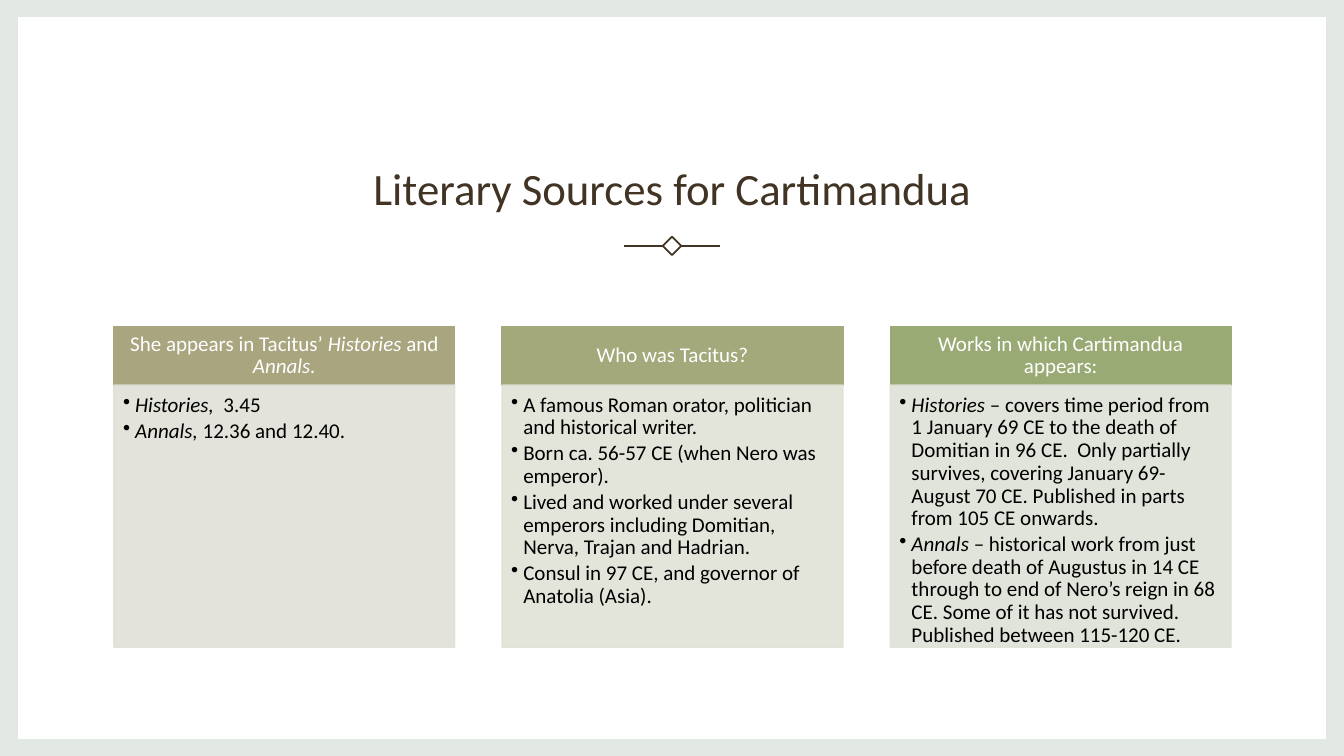
from dataclasses import dataclass

from lxml import etree
from pptx import Presentation, util as u
from pptx.dml.color import RGBColor
from pptx.enum import shapes, text
from pptx.oxml import ns

TITLE = "Literary Sources for Cartimandua"
COLUMNS = [
    {
        "heading": [("She appears in Tacitus’ ", False), ("Histories", True),
                    (" and ", False), ("Annals.", True)],
        "points": [
            [("Histories, ", True), (" 3.45", False)],
            [("Annals, ", True), ("12.36 and 12.40.", False)],
        ],
    },
    {
        "heading": [("Who was Tacitus?", False)],
        "points": [
            [("A famous Roman orator, politician and historical writer.", False)],
            [("Born ca. 56-57 CE (when Nero was emperor).", False)],
            [("Lived and worked under several emperors including Domitian, "
              "Nerva, Trajan and Hadrian.", False)],
            [("Consul in 97 CE, and governor of Anatolia (Asia).", False)],
        ],
    },
    {
        "heading": [("Works in which Cartimandua appears:", False)],
        "points": [
            [("Histories", True),
             (" – covers time period from 1 January 69 CE to the death of Domitian "
              "in 96 CE.  Only partially survives, covering January 69-August 70 CE. "
              "Published in parts from 105 CE onwards.", False)],
            [("Annals", True),
             (" – historical work from just before death of Augustus in 14 CE "
              "through to end of Nero’s reign in 68 CE. Some of it has not survived. "
              "Published between 115-120 CE.", False)],
        ],
    },
]


@dataclass(frozen=True)
class Theme:
    font: str = "Calibri"
    title_size: int = 32
    text_size: int = 15
    ink: str = "413424"
    body_ink: str = "000000"
    paper: str = "FFFFFF"
    border: str = "E2E8E3"
    headings: tuple = ("A8A57F", "A3A97A", "99AA74")
    bodies: tuple = ("E1E1D8", "E0E2D7", "DEE2D6")
    body_opacity: int = 90


THEME = Theme()
WIDTH, HEIGHT = 13.33, 7.5
BORDER_X, BORDER_Y = 0.18, 0.17
MARGIN = 1.13
CONTENT_WIDTH = WIDTH - 2 * MARGIN + 0.01
COLUMN_WIDTH = 3.38
COLUMN_STEP = (CONTENT_WIDTH - COLUMN_WIDTH) / (len(COLUMNS) - 1)
HEADING_TOP, HEADING_HEIGHT, BODY_HEIGHT = 3.24, 0.58, 2.6
ORNAMENT_Y, DIAMOND_SIDE = 2.44, 0.13
RULE_INNER, RULE_OUTER = 0.09, 0.475
INDENT = 0.12


def inches(*lengths):
    return [u.Inches(length) for length in lengths]


def colour(code):
    return RGBColor.from_string(code)


def add_box(parent, place, fill=None, line=None, line_width=1):
    box = parent.add_shape(shapes.MSO_SHAPE.RECTANGLE, *inches(*place))
    box.shadow.inherit = False
    for paint, code in ((box.fill, fill), (box.line.fill, line)):
        if code:
            paint.solid()
            paint.fore_color.rgb = colour(code)
        else:
            paint.background()
    if line:
        box.line.width = u.Pt(line_width)
    return box


def make_translucent(box):
    for tint in box.element.spPr.iter(ns.qn("a:srgbClr")):
        etree.SubElement(tint, ns.qn("a:alpha"), val=str(THEME.body_opacity * 1000))


def set_frame(frame, anchor, insets):
    frame.word_wrap = True
    frame.auto_size = text.MSO_AUTO_SIZE.NONE
    frame.vertical_anchor = anchor
    (frame.margin_left, frame.margin_top,
     frame.margin_right, frame.margin_bottom) = inches(*insets)


def write(paragraph, runs, size, ink, align, spacing, after=0):
    paragraph.alignment = align
    paragraph.line_spacing = spacing
    paragraph.space_before = u.Pt(0)
    paragraph.space_after = u.Pt(after)
    for words, italic in runs:
        run = paragraph.add_run()
        run.text = words
        run.font.name = THEME.font
        run.font.size = u.Pt(size)
        run.font.italic = italic
        run.font.color.rgb = colour(ink)


def add_bullet(paragraph):
    properties = paragraph._p.get_or_add_pPr()
    properties.set("marL", str(u.Inches(INDENT)))
    properties.set("indent", str(-u.Inches(INDENT)))
    etree.SubElement(properties, ns.qn("a:buChar"), char="•")


def add_title(slide):
    title = slide.shapes.title
    title.left, title.top, title.width, title.height = inches(
        MARGIN, 1.05, CONTENT_WIDTH, 1.13)
    set_frame(title.text_frame, text.MSO_ANCHOR.BOTTOM, (0.1, 0.05, 0.1, 0.05))
    write(title.text_frame.paragraphs[0], [(TITLE, False)], THEME.title_size,
          THEME.ink, text.PP_ALIGN.CENTER, 1.1)
    slide.shapes.element.append(title.element)


def add_ornament(slide):
    ornament = slide.shapes.add_group_shape().shapes
    centre, half = WIDTH / 2, DIAMOND_SIDE / 2
    diamond = add_box(ornament, (centre - half, ORNAMENT_Y - half,
                                 DIAMOND_SIDE, DIAMOND_SIDE),
                      line=THEME.ink, line_width=1.25)
    diamond.rotation = 45
    for side in (1, -1):
        rule = ornament.add_connector(
            shapes.MSO_CONNECTOR.STRAIGHT,
            *inches(centre + side * RULE_INNER, ORNAMENT_Y,
                    centre + side * RULE_OUTER, ORNAMENT_Y))
        rule.line.color.rgb = colour(THEME.ink)
        rule.line.width = u.Pt(1.25)
        etree.SubElement(rule.element.spPr, ns.qn("a:effectLst"))


def add_columns(slide):
    group = slide.shapes.add_group_shape().shapes
    for index, column in enumerate(COLUMNS):
        left = MARGIN + index * COLUMN_STEP
        tint = THEME.headings[index]
        heading = add_box(group, (left, HEADING_TOP, COLUMN_WIDTH, HEADING_HEIGHT),
                          tint, tint)
        set_frame(heading.text_frame, text.MSO_ANCHOR.MIDDLE, (0.12, 0.07, 0.12, 0.07))
        write(heading.text_frame.paragraphs[0], column["heading"], THEME.text_size,
              THEME.paper, text.PP_ALIGN.CENTER, 0.9)

        tint = THEME.bodies[index]
        body = add_box(group, (left, HEADING_TOP + HEADING_HEIGHT,
                               COLUMN_WIDTH, BODY_HEIGHT), tint, tint)
        make_translucent(body)
        frame = body.text_frame
        set_frame(frame, text.MSO_ANCHOR.TOP, (0.09, 0.09, 0.12, 0.13))
        for number, point in enumerate(column["points"]):
            paragraph = frame.add_paragraph() if number else frame.paragraphs[0]
            write(paragraph, point, THEME.text_size, THEME.body_ink,
                  text.PP_ALIGN.LEFT, 0.9, after=2.25)
            add_bullet(paragraph)


def main():
    deck = Presentation()
    deck.slide_width, deck.slide_height = inches(WIDTH, HEIGHT)
    slide = deck.slides.add_slide(deck.slide_layouts.get_by_name("Title Only"))
    add_box(slide.shapes, (0, 0, WIDTH, HEIGHT), THEME.border)
    add_box(slide.shapes, (BORDER_X, BORDER_Y, WIDTH - 2 * BORDER_X,
                           HEIGHT - 2 * BORDER_Y), THEME.paper)
    add_title(slide)
    add_ornament(slide)
    add_columns(slide)
    deck.save("out.pptx")


if __name__ == "__main__":
    main()
